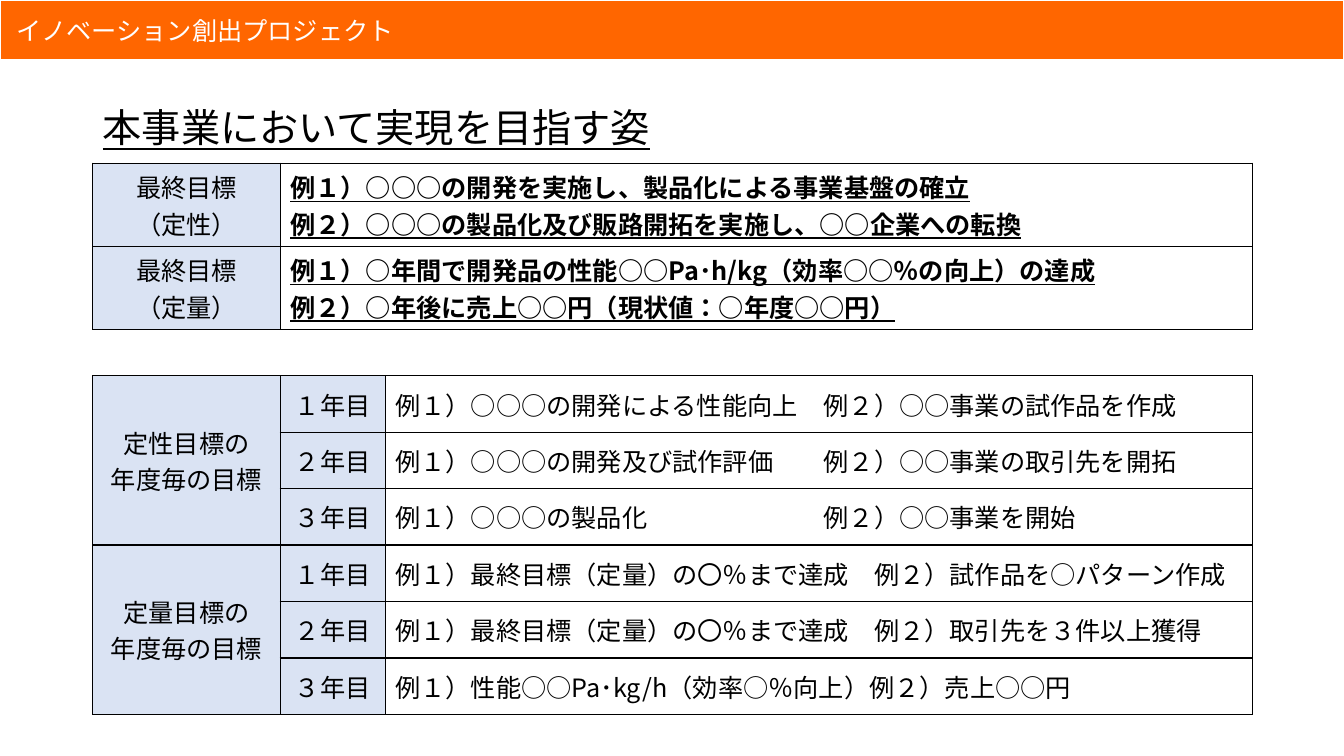
from dataclasses import dataclass

from lxml.etree import SubElement
from pptx import Presentation
from pptx.dml.color import RGBColor as Color
from pptx.enum.shapes import MSO_SHAPE as Shape
from pptx.enum.text import MSO_ANCHOR as Anchor, MSO_AUTO_SIZE as AutoSize, PP_ALIGN as Align
from pptx.oxml.ns import qn
from pptx.util import Inches, Pt


@dataclass(frozen=True)
class Theme:
    font: str = "Noto Sans CJK JP"
    orange: Color = Color.from_string("FF6600")
    label: Color = Color.from_string("DAE3F3")
    white: Color = Color.from_string("FFFFFF")
    black: Color = Color.from_string("000000")
    title_size: int = 28
    text_size: int = 18
    border: int = 1


THEME = Theme()
PLAIN_TABLE_STYLE = "{2D5ABB26-0587-4C30-8999-92F81FD0307C}"
COLUMNS = (1.86, 1.04, 8.6)
GOAL_HEIGHT, GAP_HEIGHT, YEAR_HEIGHT = 0.82, 0.46, 0.56
EXAMPLE_TAB = 4.25

FINAL_GOALS = [
    (["最終目標", "（定性）"],
     ["例１）○○○の開発を実施し、製品化による事業基盤の確立",
      "例２）○○○の製品化及び販路開拓を実施し、○○企業への転換"]),
    (["最終目標", "（定量）"],
     ["例１）○年間で開発品の性能○○Pa･h/kg（効率○○％の向上）の達成",
      "例２）○年後に売上○○円（現状値：○年度○○円）"]),
]
YEARS = ["１年目", "２年目", "３年目"]
# A tuple holds two examples, the second one set on the tab stop
YEARLY_GOALS = [
    (["定性目標の", "年度毎の目標"],
     [("例１）○○○の開発による性能向上", "例２）○○事業の試作品を作成"),
      ("例１）○○○の開発及び試作評価", "例２）○○事業の取引先を開拓"),
      ("例１）○○○の製品化", "例２）○○事業を開始")]),
    (["定量目標の", "年度毎の目標"],
     [("例１）最終目標（定量）の〇％まで達成　例２）試作品を○パターン作成",),
      ("例１）最終目標（定量）の〇％まで達成　例２）取引先を３件以上獲得",),
      ("例１）性能○○Pa･kg/h（効率○％向上）例２）売上○○円",)]),
]


def add_span(para, text, size, color, bold=False, underline=False):
    span = para.add_run()
    span.text = text
    font = span.font
    font.name, font.size = THEME.font, Pt(size)
    font.bold, font.underline = bold, underline
    font.color.rgb = color
    properties = span._r.get_or_add_rPr()
    properties.set("lang", "ja-JP")
    SubElement(properties, qn("a:ea")).set("typeface", THEME.font)


def add_band(page, left, top, width, height):
    band = page.shapes.add_shape(
        Shape.RECTANGLE, Inches(left), Inches(top), Inches(width), Inches(height))
    band.shadow.inherit = False
    band.fill.solid()
    band.fill.fore_color.rgb = THEME.orange
    band.line.color.rgb = THEME.white
    band.line.width = Pt(1.5)
    frame = band.text_frame
    frame.vertical_anchor = Anchor.MIDDLE
    frame.margin_left = Inches(0.16)
    para = frame.paragraphs[0]
    para.alignment = Align.LEFT
    add_span(para, "イノベーション創出プロジェクト", THEME.text_size, THEME.white)


def place_title(page, left, top, width, height):
    title = page.shapes.title
    title.left, title.top = Inches(left), Inches(top)
    title.width, title.height = Inches(width), Inches(height)
    frame = title.text_frame
    frame.auto_size = AutoSize.NONE
    frame.vertical_anchor = Anchor.MIDDLE
    para = frame.paragraphs[0]
    para.alignment = Align.LEFT
    para.line_spacing = 0.9
    add_span(para, "本事業において実現を目指す姿", THEME.title_size, THEME.black, underline=True)


def set_borders(cell, sides):
    properties = cell._tc.get_or_add_tcPr()
    for position, side in enumerate(sides):
        line = SubElement(properties, qn(f"a:ln{side}"), w=str(Pt(THEME.border)))
        fill = SubElement(line, qn("a:solidFill"))
        SubElement(fill, qn("a:srgbClr"), val=str(THEME.black))
        properties.remove(line)
        properties.insert(position, line)  # borders come before the fill


def fill_cell(cell, lines, label=False, strong=False):
    cell.vertical_anchor = Anchor.MIDDLE
    if label:
        cell.fill.solid()
        cell.fill.fore_color.rgb = THEME.label
    else:
        cell.fill.background()
    frame = cell.text_frame
    for index, line in enumerate(lines):
        para = frame.add_paragraph() if index else frame.paragraphs[0]
        para.alignment = Align.CENTER if label else Align.LEFT
        if "\t" in line:
            tabs = SubElement(para._p.get_or_add_pPr(), qn("a:tabLst"))
            SubElement(tabs, qn("a:tab"), pos=str(Inches(EXAMPLE_TAB)), algn="l")
        add_span(para, line, THEME.text_size, THEME.black, strong, strong)


def add_goal_table(page, left, top, width):
    year_rows = len(YEARLY_GOALS) * len(YEARS)
    gap_row = len(FINAL_GOALS)
    heights = [GOAL_HEIGHT] * gap_row + [GAP_HEIGHT] + [YEAR_HEIGHT] * year_rows
    frame = page.shapes.add_table(len(heights), len(COLUMNS), Inches(left), Inches(top),
                                  Inches(width), Inches(sum(heights)))
    table = frame.table
    table.first_row = table.horz_banding = False
    frame._element.find(".//" + qn("a:tableStyleId")).text = PLAIN_TABLE_STYLE
    for column, size in zip(table.columns, COLUMNS):
        column.width = Inches(size)
    for row, size in zip(table.rows, heights):
        row.height = Inches(size)

    # Final goals
    for row, (label, examples) in enumerate(FINAL_GOALS):
        table.cell(row, 1).merge(table.cell(row, 2))
        fill_cell(table.cell(row, 0), label, label=True)
        fill_cell(table.cell(row, 1), examples, strong=True)

    # Open row between the two blocks
    table.cell(gap_row, 1).merge(table.cell(gap_row, 2))
    for column in range(len(COLUMNS)):
        fill_cell(table.cell(gap_row, column), [])

    # Goals for each year
    for block, (label, goals) in enumerate(YEARLY_GOALS):
        first = gap_row + 1 + block * len(YEARS)
        table.cell(first, 0).merge(table.cell(first + len(YEARS) - 1, 0))
        fill_cell(table.cell(first, 0), label, label=True)
        for row, (year, examples) in enumerate(zip(YEARS, goals), first):
            fill_cell(table.cell(row, 1), [year], label=True)
            fill_cell(table.cell(row, 2), ["\t".join(examples)])

    # Borders: the open row has no sides
    for row in range(len(heights)):
        for column in range(len(COLUMNS)):
            set_borders(table.cell(row, column), "TB" if row == gap_row else "LRTB")


def main():
    deck = Presentation()
    deck.slide_width, deck.slide_height = Inches(13.33), Inches(7.5)
    page = deck.slides.add_slide(deck.slide_layouts[5])
    add_band(page, 0, 0, 13.33, 0.6)
    place_title(page, 0.92, 0.74, 11.5, 1.1)
    add_goal_table(page, 0.92, 1.62, sum(COLUMNS))
    deck.save("out.pptx")


if __name__ == "__main__":
    main()
